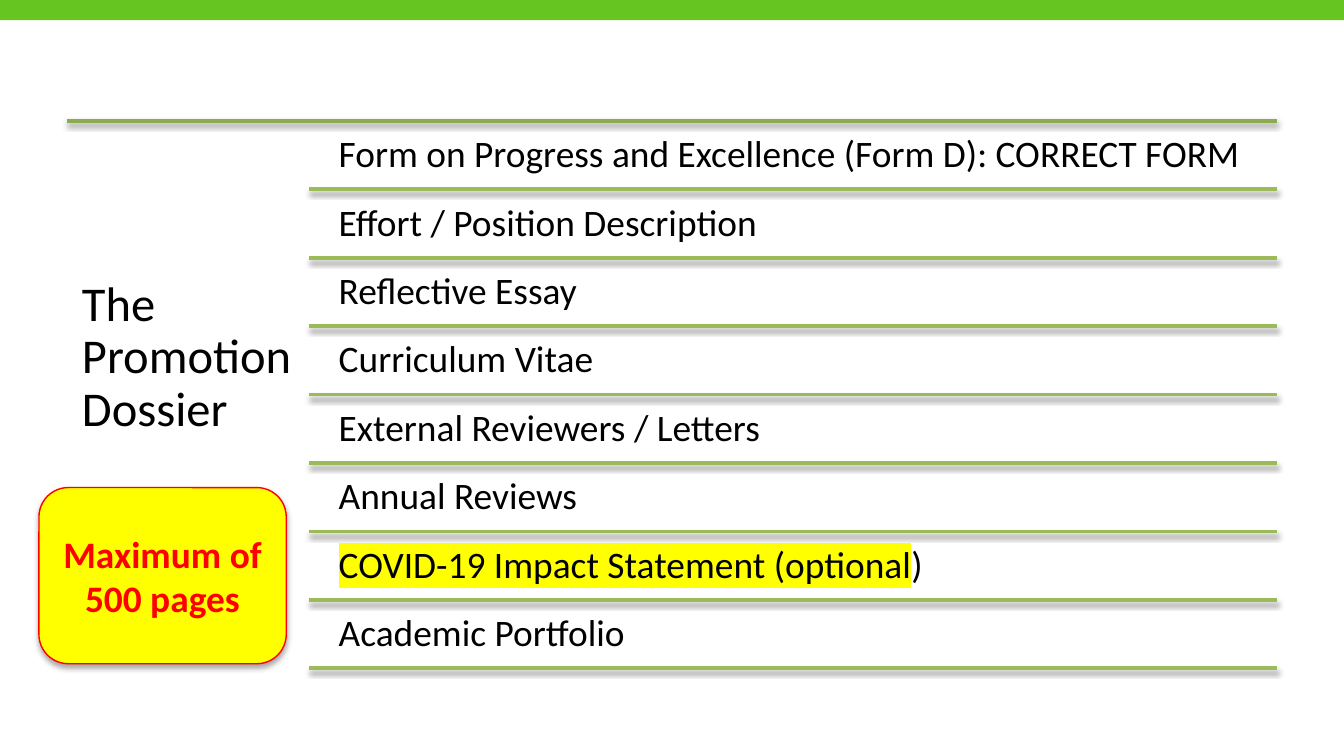
from dataclasses import dataclass

from lxml import etree
from pptx import Presentation
from pptx.dml.color import RGBColor
from pptx.enum.shapes import MSO_CONNECTOR, MSO_SHAPE
from pptx.enum.text import MSO_ANCHOR, MSO_AUTO_SIZE, PP_ALIGN
from pptx.oxml.ns import qn
from pptx.util import Emu, Inches, Pt

STRAIGHT = MSO_CONNECTOR.STRAIGHT
RECTANGLE, ROUNDED = MSO_SHAPE.RECTANGLE, MSO_SHAPE.ROUNDED_RECTANGLE
TOP, MIDDLE = MSO_ANCHOR.TOP, MSO_ANCHOR.MIDDLE
LEFT, CENTER = PP_ALIGN.LEFT, PP_ALIGN.CENTER
NO_FIT = MSO_AUTO_SIZE.NONE

COLORS = {
    "band": "67C521",
    "top_rule": "8DAA51",
    "rule": "9BBB59",
    "text": "000000",
    "marker": "FFFF00",
    "warning": "FF0000",
}
FONT = "Calibri"
WIDTH = Inches(10)
HEIGHT = Emu(WIDTH * 9 // 16)
LEFT_EDGE, ITEM_EDGE, RIGHT_EDGE = 0.05, 0.23, 0.95
LIST_TOP, LIST_BOTTOM = 0.16, 0.884
LINE_SPACING = 0.9
ITEM_SIZE = 20
CALIBRI_LINE = 1.2


@dataclass
class Phrase:
    text: str
    marked: bool = False


@dataclass
class Box:
    left: float
    top: float
    width: float
    height: float

    def place(self) -> tuple[Emu, Emu, Emu, Emu]:
        return (Emu(round(self.left * WIDTH)), Emu(round(self.top * HEIGHT)),
                Emu(round(self.width * WIDTH)), Emu(round(self.height * HEIGHT)))


DOSSIER_ITEMS = [
    [Phrase("Form on Progress and Excellence (Form D): CORRECT FORM")],
    [Phrase("Effort / Position Description")],
    [Phrase("Reflective Essay")],
    [Phrase("Curriculum Vitae")],
    [Phrase("External Reviewers / Letters")],
    [Phrase("Annual Reviews")],
    [Phrase("COVID-19 Impact Statement (optional", marked=True), Phrase(")")],
    [Phrase("Academic Portfolio")],
]
ROW = (LIST_BOTTOM - LIST_TOP) / len(DOSSIER_ITEMS)


def color(name: str) -> RGBColor:
    return RGBColor.from_string(COLORS[name])


def add_shadow(shape, distance: float, opacity: int) -> None:
    properties = shape._element.spPr
    for old in properties.findall(qn("a:effectLst")):
        properties.remove(old)
    effects = etree.SubElement(properties, qn("a:effectLst"))
    shadow = etree.SubElement(effects, qn("a:outerShdw"), blurRad=str(Pt(3.1)),
                              dist=str(Pt(distance)), dir="5400000", rotWithShape="0")
    black = etree.SubElement(shadow, qn("a:srgbClr"), val="000000")
    etree.SubElement(black, qn("a:alpha"), val=str(opacity * 1000))


def add_rule(slide, start: float, y: float, color_name: str) -> None:
    x1, y1, length, _ = Box(start, y, RIGHT_EDGE - start, 0).place()
    rule = slide.shapes.add_connector(STRAIGHT, x1, y1, x1 + length, y1)
    rule.line.color.rgb = color(color_name)
    rule.line.width = Pt(2)
    add_shadow(rule, 1.6, 38)


def add_phrase(paragraph, phrase: Phrase, size: int, color_name: str, bold: bool = False) -> None:
    run = paragraph.add_run()
    run.text = phrase.text
    run.font.size = Pt(size)
    run.font.bold = bold
    run.font.color.rgb = color(color_name)
    if phrase.marked:
        highlight = etree.SubElement(run._r.get_or_add_rPr(), qn("a:highlight"))
        etree.SubElement(highlight, qn("a:srgbClr"), val=COLORS["marker"])
    run.font.name = FONT


def set_up_placeholder(placeholder, box: Box, inset: float, top_inset: float):
    placeholder.left, placeholder.top, placeholder.width, placeholder.height = box.place()
    frame = placeholder.text_frame
    frame.word_wrap = True
    frame.auto_size = NO_FIT
    frame.vertical_anchor = TOP
    frame.margin_left = frame.margin_right = frame.margin_bottom = Inches(inset)
    frame.margin_top = Inches(top_inset)
    return frame


def fill_title(slide) -> None:
    box = Box(LEFT_EDGE, LIST_TOP, ITEM_EDGE - LEFT_EDGE, LIST_BOTTOM - LIST_TOP)
    frame = set_up_placeholder(slide.shapes.title, box, 0.11, 1.18)
    heading = frame.paragraphs[0]
    heading.alignment = LEFT
    heading.line_spacing = LINE_SPACING
    add_phrase(heading, Phrase("The Promotion Dossier"), 26, "text")


def fill_items(slide) -> None:
    box = Box(0.244, LIST_TOP + 0.005, 0.707, LIST_BOTTOM - LIST_TOP)
    frame = set_up_placeholder(slide.placeholders[1], box, 0.08, 0.08)
    gap = Emu(round(ROW * HEIGHT)).pt - ITEM_SIZE * CALIBRI_LINE * LINE_SPACING
    for index, phrases in enumerate(DOSSIER_ITEMS):
        item = frame.add_paragraph() if index else frame.paragraphs[0]
        properties = item._p.get_or_add_pPr()
        properties.set("marL", "0")
        properties.set("indent", "0")
        etree.SubElement(properties, qn("a:buNone"))
        item.alignment = LEFT
        item.line_spacing = LINE_SPACING
        item.space_before = Pt(0)
        item.space_after = Pt(gap)
        for phrase in phrases:
            add_phrase(item, phrase, ITEM_SIZE, "text")


def add_band(slide) -> None:
    band = slide.shapes.add_shape(RECTANGLE, 0, 0, WIDTH, Inches(0.15))
    band.shadow.inherit = False
    band.fill.solid()
    band.fill.fore_color.rgb = color("band")
    band.line.fill.background()


def add_page_limit(slide) -> None:
    limit = slide.shapes.add_shape(ROUNDED, *Box(0.029, 0.645, 0.184, 0.233).place())
    limit.fill.solid()
    limit.fill.fore_color.rgb = color("marker")
    limit.line.color.rgb = color("warning")
    limit.line.width = Pt(0.75)
    add_shadow(limit, 1.8, 35)
    frame = limit.text_frame
    frame.word_wrap = True
    frame.vertical_anchor = MIDDLE
    frame.paragraphs[0].alignment = CENTER
    add_phrase(frame.paragraphs[0], Phrase("Maximum of 500 pages"), 20, "warning", bold=True)


def main() -> None:
    deck = Presentation()
    deck.slide_width, deck.slide_height = WIDTH, HEIGHT
    slide = deck.slides.add_slide(deck.slide_layouts[1])
    add_band(slide)
    add_rule(slide, LEFT_EDGE, LIST_TOP, "top_rule")
    fill_title(slide)
    fill_items(slide)
    for row in range(1, len(DOSSIER_ITEMS) + 1):
        add_rule(slide, ITEM_EDGE, LIST_TOP + row * ROW, "rule")
    add_page_limit(slide)
    deck.save("out.pptx")


if __name__ == "__main__":
    main()
